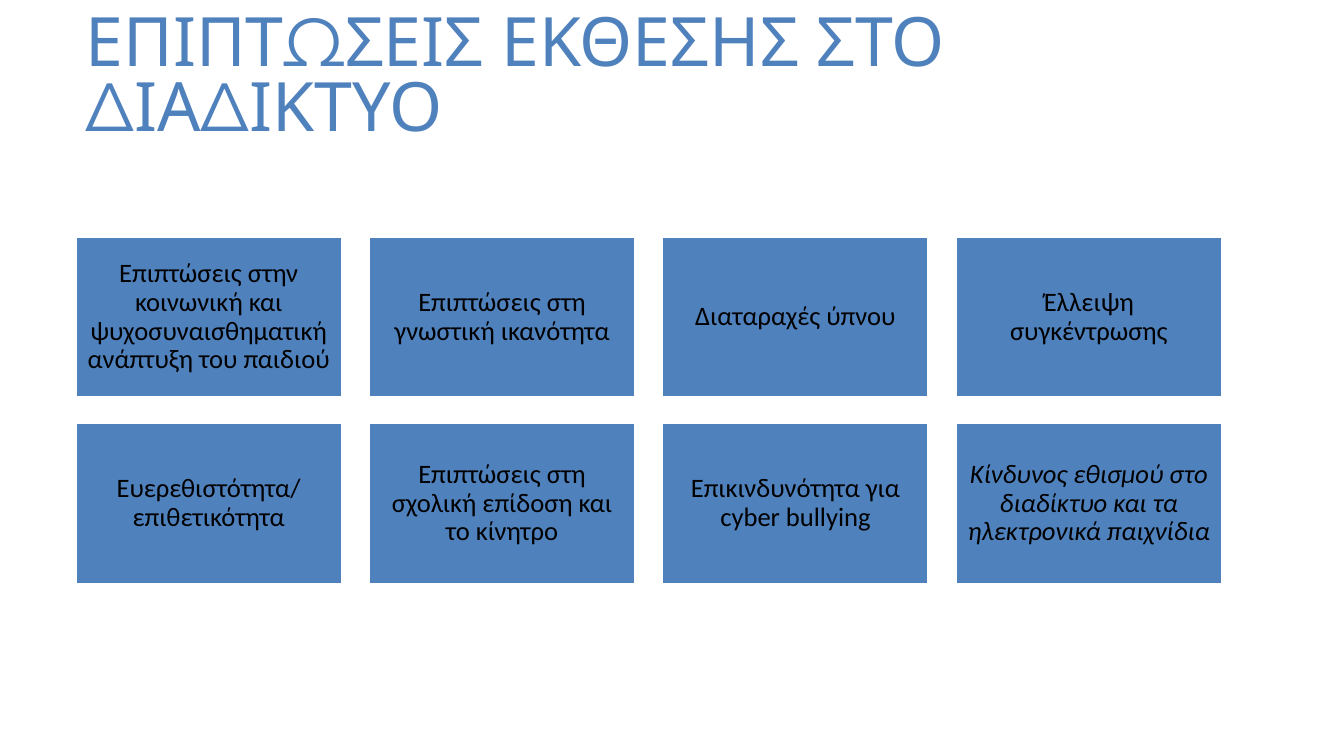
from pptx import Presentation
from pptx.dml.color import RGBColor as Color
from pptx.enum.shapes import MSO_SHAPE as Shape
from pptx.enum.text import MSO_ANCHOR as Anchor, PP_ALIGN as Align
from pptx.util import Inches, Pt

COLORS = {"blue": "4F81BD", "white": "FFFFFF", "black": "000000"}
LEFT, TOP = 0.75, 2.35
CARD_WIDTH, CARD_HEIGHT = 2.64, 1.59
COLUMN_STEP, ROW_STEP = 2.91, 1.85
COLUMNS = 4
EFFECTS = [
    "Επιπτώσεις στην κοινωνική και ψυχοσυναισθηματική ανάπτυξη του παιδιού",
    "Επιπτώσεις στη γνωστική ικανότητα",
    "Διαταραχές ύπνου",
    "Έλλειψη συγκέντρωσης",
    "Ευερεθιστότητα/ επιθετικότητα",
    "Επιπτώσεις στη σχολική επίδοση και το κίνητρο",
    "Επικινδυνότητα για cyber bullying",
    "Κίνδυνος εθισμού στο διαδίκτυο και τα ηλεκτρονικά παιχνίδια",
]
ITALIC_EFFECT = EFFECTS[-1]


class SlideBuilder:
    """Draws the title and effect cards in one shared style."""

    def __init__(self, slide):
        self.slide = slide

    def color(self, name):
        return Color.from_string(COLORS[name])

    def set_text(self, shape, text, font, size, color, align, spacing):
        frame = shape.text_frame
        frame.word_wrap = True
        frame.vertical_anchor = Anchor.MIDDLE
        paragraph = frame.paragraphs[0]
        paragraph.text = text
        paragraph.alignment = align
        paragraph.line_spacing = spacing
        paragraph.font.name = font
        paragraph.font.size = Pt(size)
        paragraph.font.color.rgb = self.color(color)
        return paragraph

    def title(self, text):
        box = self.slide.shapes.add_textbox(
            Inches(LEFT), Inches(0.25), Inches(11.37), Inches(1.08))
        self.set_text(box, text, "Montserrat", 48.6, "blue", Align.LEFT, 0.8)

    def card(self, text, left, top, italic):
        card = self.slide.shapes.add_shape(
            Shape.RECTANGLE, Inches(left), Inches(top),
            Inches(CARD_WIDTH), Inches(CARD_HEIGHT))
        card.shadow.inherit = False
        card.fill.solid()
        card.fill.fore_color.rgb = self.color("blue")
        card.line.color.rgb = self.color("white")
        card.line.width = Pt(1.5)
        frame = card.text_frame
        frame.margin_left = frame.margin_right = Inches(0.08)
        frame.margin_top = frame.margin_bottom = Inches(0.08)
        paragraph = self.set_text(card, text, "Calibri", 19, "black", Align.CENTER, 0.9)
        paragraph.font.italic = italic


def main():
    presentation = Presentation()
    presentation.slide_width = Inches(13.33)
    presentation.slide_height = Inches(7.5)
    builder = SlideBuilder(presentation.slides.add_slide(presentation.slide_layouts[6]))
    builder.title("ΕΠΙΠΤΩΣΕΙΣ ΕΚΘΕΣΗΣ ΣΤΟ ΔΙΑΔΙΚΤΥΟ")
    for index, effect in enumerate(EFFECTS):
        row, column = divmod(index, COLUMNS)
        builder.card(effect, LEFT + column * COLUMN_STEP, TOP + row * ROW_STEP,
                     effect == ITALIC_EFFECT)
    presentation.save("out.pptx")


if __name__ == "__main__":
    main()
